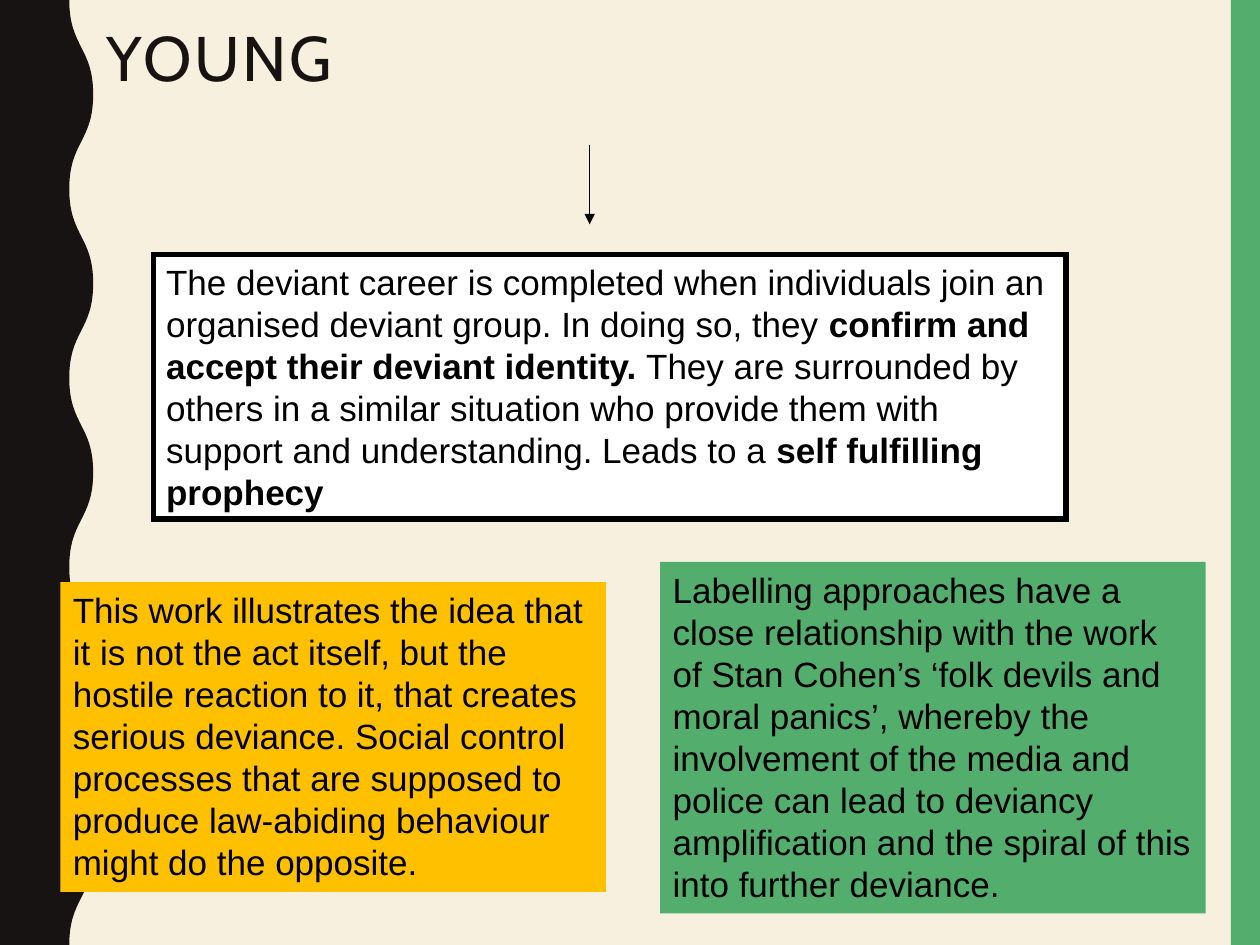
import lxml.etree
import pptx
import pptx.dml.color
import pptx.enum.shapes
import pptx.enum.text
import pptx.oxml.ns
import pptx.util

Inches = pptx.util.Inches
Pt = pptx.util.Pt
qn = pptx.oxml.ns.qn

THEME = {
    "cream": "F7F0DF", "ink": "171312", "green": "53AE6E",
    "amber": "FFC000", "white": "FFFFFF", "black": "000000",
    "title_font": "Cabin", "body_font": "Arial",
    "title_size": 36, "body_size": 20, "title_tracking": 150,
}

HEADING = "YOUNG"
CAREER = {"at": (1.22, 2.02, 7.24, 2.1), "fill": "white", "border": 3, "text": [
    ("The deviant career is completed when individuals join an organised "
     "deviant group. In doing so, they ", False),
    ("confirm and accept their deviant identity.", True),
    (" They are surrounded by others in a similar situation who provide "
     "them with support and understanding. Leads to a ", False),
    ("self fulfilling prophecy", True)]}
REACTION = {"at": (0.48, 4.62, 4.33, 2.46), "fill": "amber", "border": 0, "text": [
    ("This work illustrates the idea that it is not the act itself, but "
     "the hostile reaction to it, that creates serious deviance. Social "
     "control processes that are supposed to produce law-abiding "
     "behaviour might do the opposite.", False)]}
PANICS = {"at": (5.24, 4.46, 4.33, 2.79), "fill": "green", "border": 0, "text": [
    ("Labelling approaches have a close relationship with the work of "
     "Stan Cohen’s ‘folk devils and moral panics’, whereby the "
     "involvement of the media and police can lead to deviancy "
     "amplification and the spiral of this into further deviance.", False)]}

WIDTH, HEIGHT = 10, 7.5
WAVE_EDGES = (0.55, 0.74)
HALF_WAVES = 10


def color(key):
    return pptx.dml.color.RGBColor.from_string(THEME[key])


def paint(shape, fill, border=0):
    shape.shadow.inherit = False
    shape.fill.solid()
    shape.fill.fore_color.rgb = color(fill)
    if border:
        shape.line.color.rgb = color("black")
        shape.line.width = Pt(border)
        lxml.etree.SubElement(
            shape.line._get_or_add_ln(), qn("a:miter"), lim="800000")
    else:
        shape.line.fill.background()


def add_rectangle(slide, at, fill, border=0):
    rectangle = slide.shapes.add_shape(
        pptx.enum.shapes.MSO_SHAPE.RECTANGLE, *map(Inches, at))
    paint(rectangle, fill, border)
    return rectangle


def add_wave(slide):
    crests = [(Inches(WAVE_EDGES[index % 2]), Inches(HEIGHT * index / HALF_WAVES))
              for index in range(HALF_WAVES + 1)]
    builder = slide.shapes.build_freeform(*crests[0], scale=1.0)
    builder.add_line_segments(
        [*crests[1:], (0, Inches(HEIGHT)), (0, 0)], close=True)
    wave = builder.convert_to_shape()
    paint(wave, "ink")
    segments = list(wave._element.iter(qn("a:lnTo")))
    for segment, start, end in zip(segments, crests, crests[1:]):
        middle = (start[1] + end[1]) // 2
        segment_curve = lxml.etree.Element(qn("a:cubicBezTo"))
        for x, y in ((start[0], middle), (end[0], middle), end):
            lxml.etree.SubElement(
                segment_curve, qn("a:pt"), x=str(int(x)), y=str(int(y)))
        segment.getparent().replace(segment, segment_curve)


def add_heading(slide):
    heading = slide.shapes.add_textbox(*map(Inches, (0.75, 0.17, 7.51, 1.14)))
    heading.text_frame.word_wrap = True
    paragraph = heading.text_frame.paragraphs[0]
    paragraph.line_spacing = 0.9
    run = paragraph.add_run()
    run.text = HEADING
    run.font._element.set("spc", str(THEME["title_tracking"]))
    paragraph.font.name = THEME["title_font"]
    paragraph.font.size = Pt(THEME["title_size"])
    paragraph.font.color.rgb = color("ink")


def add_arrow(slide):
    arrow = slide.shapes.add_connector(
        pptx.enum.shapes.MSO_CONNECTOR.STRAIGHT,
        *map(Inches, (4.68, 1.15, 4.68, 1.78)))
    arrow.line.color.rgb = color("black")
    arrow.line.width = Pt(0.75)
    lxml.etree.SubElement(
        arrow.line._get_or_add_ln(), qn("a:tailEnd"), type="triangle")
    lxml.etree.SubElement(arrow._element.spPr, qn("a:effectLst"))


def add_panel(slide, panel):
    frame = add_rectangle(
        slide, panel["at"], panel["fill"], panel["border"]).text_frame
    frame.word_wrap = True
    frame.vertical_anchor = pptx.enum.text.MSO_ANCHOR.TOP
    if not panel["border"]:
        frame.auto_size = pptx.enum.text.MSO_AUTO_SIZE.SHAPE_TO_FIT_TEXT
    paragraph = frame.paragraphs[0]
    paragraph.alignment = pptx.enum.text.PP_ALIGN.LEFT
    for words, bold in panel["text"]:
        run = paragraph.add_run()
        run.text = words
        if bold:
            run.font.bold = True
    paragraph.font.name = THEME["body_font"]
    paragraph.font.size = Pt(THEME["body_size"])
    paragraph.font.color.rgb = color("black")


def main():
    deck = pptx.Presentation()
    deck.slide_width, deck.slide_height = Inches(WIDTH), Inches(HEIGHT)
    slide = deck.slides.add_slide(deck.slide_layouts[6])
    slide.background.fill.solid()
    slide.background.fill.fore_color.rgb = color("cream")
    add_rectangle(slide, (9.77, 0, 0.23, HEIGHT), "green")
    add_wave(slide)
    add_heading(slide)
    add_panel(slide, CAREER)
    add_arrow(slide)
    for panel in (REACTION, PANICS):
        add_panel(slide, panel)
    deck.save("out.pptx")


if __name__ == "__main__":
    main()
